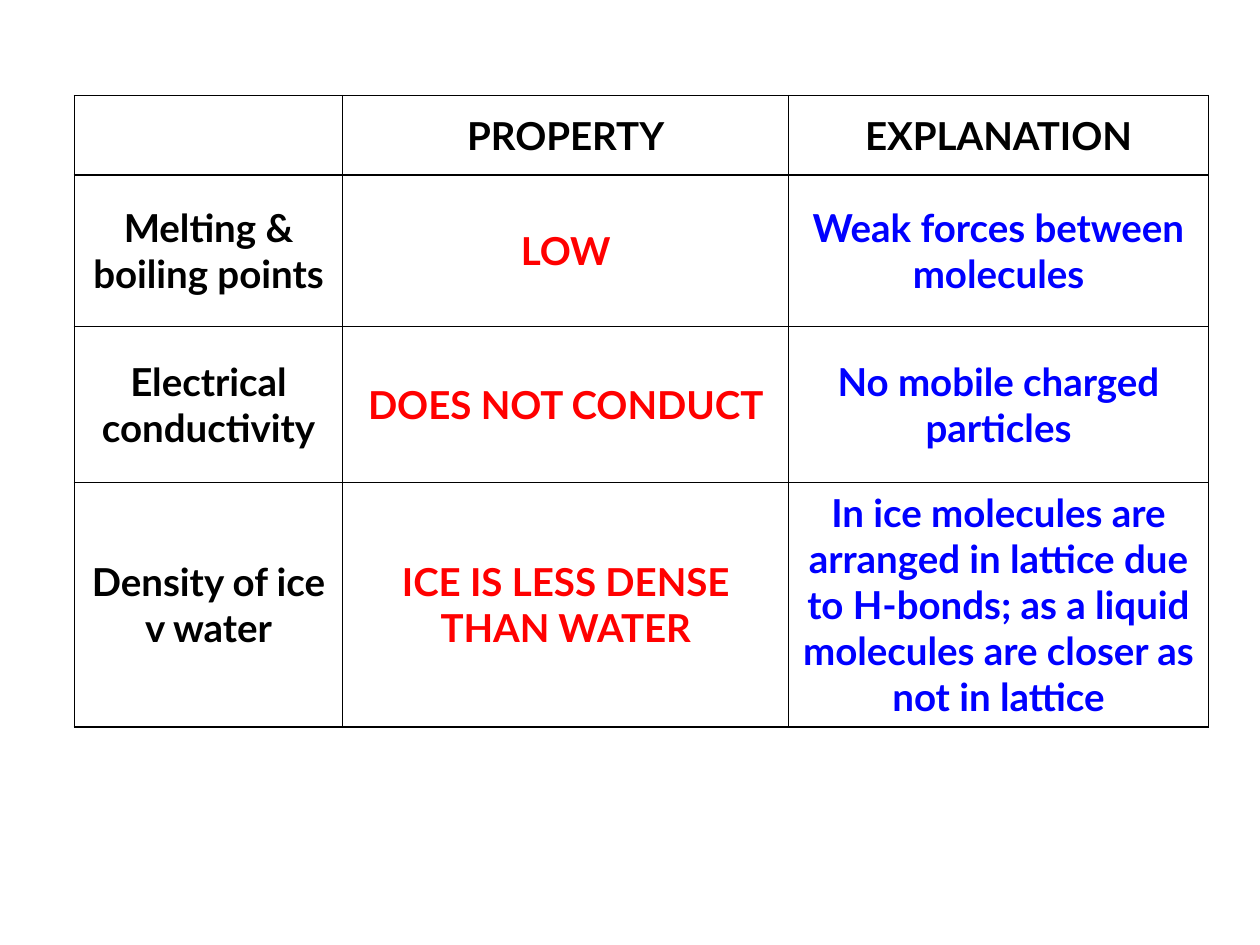
from lxml import etree
from pptx import Presentation
from pptx.dml.color import RGBColor
from pptx.enum.text import MSO_ANCHOR, PP_ALIGN
from pptx.oxml.ns import qn
from pptx.util import Inches, Pt

MIDDLE = MSO_ANCHOR.MIDDLE
CENTER = PP_ALIGN.CENTER

BLACK = RGBColor(0x00, 0x00, 0x00)
RED = RGBColor(0xFF, 0x00, 0x00)
BLUE = RGBColor(0x00, 0x00, 0xFF)

FONT = "Lato"
TEXT_SIZE = Pt(22)
BORDER_WIDTH = Pt(1)

LEFT, TOP = 0.59, 0.76
COLUMN_WIDTHS = [2.13, 3.54, 3.33]
ROW_HEIGHTS = [0.63, 1.2, 1.24, 1.94]
COLUMN_COLORS = [BLACK, RED, BLUE]

PROPERTIES = [
    ["", "PROPERTY", "EXPLANATION"],
    ["Melting & boiling points", "LOW", "Weak forces between molecules"],
    ["Electrical conductivity", "DOES NOT CONDUCT", "No mobile charged particles"],
    ["Density of ice v water", "ICE IS LESS DENSE THAN WATER",
     "In ice molecules are arranged in lattice due to H-bonds; "
     "as a liquid molecules are closer as not in lattice"],
]


def add_borders(cell, color):
    """Draw all four sides; the lines must precede the fill in the cell's XML."""
    properties = cell._tc.get_or_add_tcPr()
    for position, side in enumerate(("a:lnL", "a:lnR", "a:lnT", "a:lnB")):
        line = etree.Element(qn(side), w=str(BORDER_WIDTH))
        fill = etree.SubElement(line, qn("a:solidFill"))
        etree.SubElement(fill, qn("a:srgbClr"), val=str(color))
        properties.insert(position, line)


def write_cell(cell, text, color):
    cell.fill.background()
    cell.vertical_anchor = MIDDLE
    add_borders(cell, BLACK)
    cell.text_frame.text = text
    paragraph = cell.text_frame.paragraphs[0]
    paragraph.alignment = CENTER
    for run in paragraph.runs:
        run.font.name = FONT
        run.font.size = TEXT_SIZE
        run.font.bold = True
        run.font.color.rgb = color


def add_property_table(slide):
    table = slide.shapes.add_table(
        len(ROW_HEIGHTS), len(COLUMN_WIDTHS), Inches(LEFT), Inches(TOP),
        Inches(sum(COLUMN_WIDTHS)), Inches(sum(ROW_HEIGHTS))).table
    table.first_row = False
    table.horz_banding = False
    for column, width in zip(table.columns, COLUMN_WIDTHS):
        column.width = Inches(width)
    for row, height in zip(table.rows, ROW_HEIGHTS):
        row.height = Inches(height)
    for row_index, texts in enumerate(PROPERTIES):
        for column_index, text in enumerate(texts):
            color = COLUMN_COLORS[column_index] if row_index else BLACK
            write_cell(table.cell(row_index, column_index), text, color)


def main():
    presentation = Presentation()
    presentation.slide_width = Inches(10)
    presentation.slide_height = Inches(7.5)
    slide = presentation.slides.add_slide(presentation.slide_layouts[6])
    add_property_table(slide)
    presentation.save("out.pptx")


if __name__ == "__main__":
    main()
